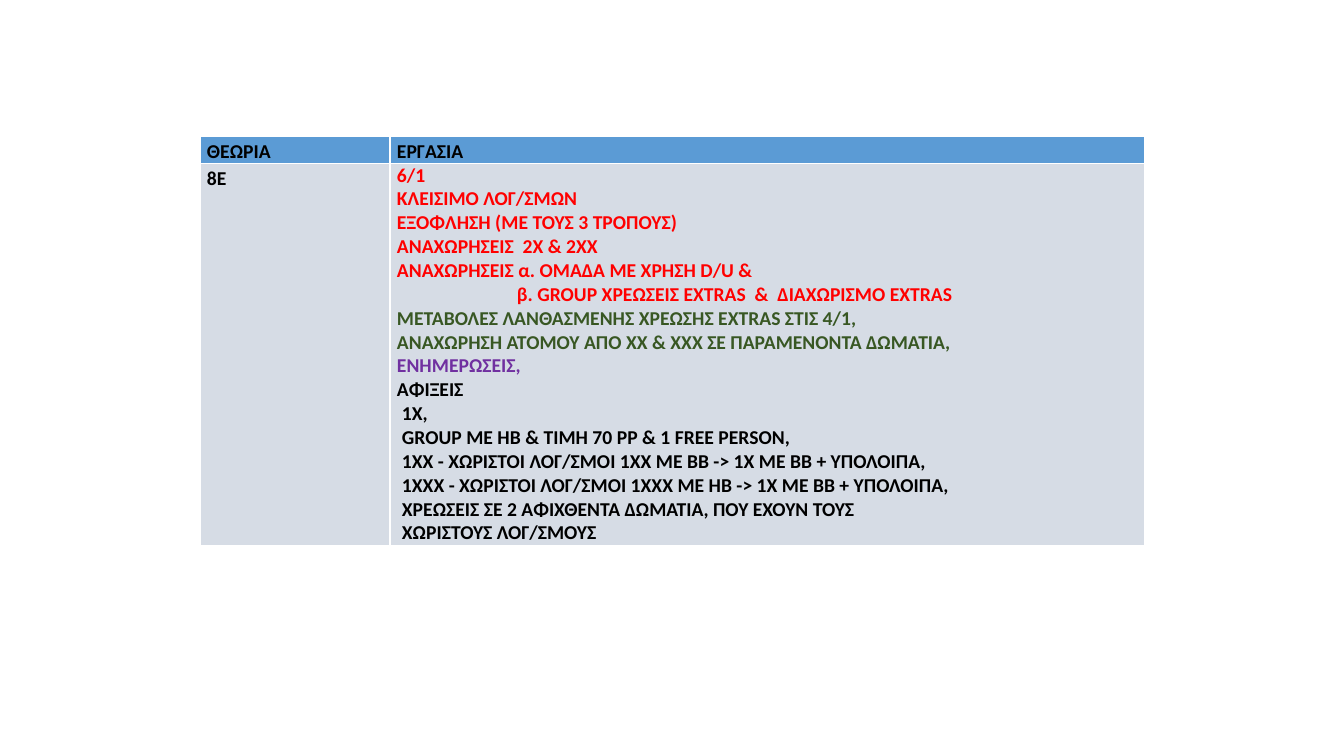
from lxml.etree import SubElement
from pptx import Presentation
from pptx.dml.color import RGBColor
from pptx.enum.text import PP_ALIGN as Align
from pptx.oxml.ns import qn
from pptx.util import Pt

PX = 914400 / 100.8
BLACK = RGBColor(0x00, 0x00, 0x00)
RED = RGBColor(0xFF, 0x00, 0x00)
GREEN = RGBColor(0x38, 0x57, 0x23)
PURPLE = RGBColor(0x70, 0x30, 0xA0)
WHITE = RGBColor(0xFF, 0xFF, 0xFF)
HEADER_FILL = RGBColor(0x5B, 0x9B, 0xD5)
BODY_FILL = RGBColor(0xD6, 0xDC, 0xE5)


def px(length):
    return round(length * PX)


def fill_cell(cell, fill, lines, alignment=None, spacing=None):
    """Format a cell and write its (text, colour, indent in px) lines."""
    cell.margin_left = cell.margin_right = px(7)
    cell.margin_top = cell.margin_bottom = 0
    properties = cell._tc.get_or_add_tcPr()
    for side in ("lnL", "lnR", "lnT", "lnB"):
        border = SubElement(properties, qn(f"a:{side}"), w=str(Pt(1)))
        SubElement(SubElement(border, qn("a:solidFill")), qn("a:srgbClr"), val=str(WHITE))
    cell.fill.solid()
    cell.fill.fore_color.rgb = fill
    for index, (text, color, indent) in enumerate(lines):
        frame = cell.text_frame
        paragraph = frame.add_paragraph() if index else frame.paragraphs[0]
        paragraph.alignment = alignment
        paragraph.line_spacing = spacing
        if indent:
            paragraph._p.get_or_add_pPr().set("marL", str(px(indent)))
        run = paragraph.add_run()
        run.text = text
        run.font.name = "Calibri"
        run.font.size = Pt(14)
        run.font.bold = True
        run.font.color.rgb = color


presentation = Presentation()
presentation.slide_width = px(1344)
presentation.slide_height = px(756)
slide = presentation.slides.add_slide(presentation.slide_layouts[6])

# Table grid
table = slide.shapes.add_table(2, 2, px(200), px(136), px(945), px(408)).table
table.horz_banding = False
for column, width in zip(table.columns, (190, 755)):
    column.width = px(width)
for row, height in zip(table.rows, (27, 381)):
    row.height = px(height)

# Header row and theory class
for row, column, text, fill in (
    (0, 0, "ΘΕΩΡΙΑ", HEADER_FILL),
    (0, 1, "ΕΡΓΑΣΙΑ", HEADER_FILL),
    (1, 0, "8E", BODY_FILL),
):
    fill_cell(table.cell(row, column), fill, [(text, BLACK, 0)], Align.JUSTIFY, 1.15)

# Tasks
tasks = [
    ("6/1", RED, 0),
    ("ΚΛΕΙΣΙΜΟ ΛΟΓ/ΣΜΩΝ", RED, 0),
    ("ΕΞΟΦΛΗΣΗ (ΜΕ ΤΟΥΣ 3 ΤΡΟΠΟΥΣ)", RED, 0),
    ("ΑΝΑΧΩΡΗΣΕΙΣ  2Χ & 2ΧΧ", RED, 0),
    ("ΑΝΑΧΩΡΗΣΕΙΣ α. ΟΜΑΔΑ ΜΕ ΧΡΗΣΗ D/U &", RED, 0),
    ("β. GROUP ΧΡΕΩΣΕΙΣ EXTRAS  &  ΔΙΑΧΩΡΙΣΜΟ EXTRAS", RED, 120),
    ("ΜΕΤΑΒΟΛΕΣ ΛΑΝΘΑΣΜΕΝΗΣ ΧΡΕΩΣΗΣ EXTRAS ΣΤΙΣ 4/1,", GREEN, 0),
    ("ΑΝΑΧΩΡΗΣΗ ΑΤΟΜΟΥ ΑΠΟ ΧΧ & ΧΧΧ ΣΕ ΠΑΡΑΜΕΝΟΝΤΑ ΔΩΜΑΤΙΑ,", GREEN, 0),
    ("ΕΝΗΜΕΡΩΣΕΙΣ,", PURPLE, 0),
    ("ΑΦΙΞΕΙΣ", BLACK, 0),
    ("1Χ,", BLACK, 5),
    ("GROUP ME ΗB & ΤΙΜΗ 70 PP & 1 FREE PERSON,", BLACK, 5),
    ("1ΧΧ - ΧΩΡΙΣΤΟΙ ΛΟΓ/ΣΜΟΙ 1ΧΧ ΜΕ ΒΒ -> 1Χ ΜΕ ΒΒ + ΥΠΟΛΟΙΠΑ,", BLACK, 5),
    ("1ΧΧΧ - ΧΩΡΙΣΤΟΙ ΛΟΓ/ΣΜΟΙ 1ΧΧΧ ΜΕ ΗΒ -> 1Χ ΜΕ ΒΒ + ΥΠΟΛΟΙΠΑ,", BLACK, 5),
    ("ΧΡΕΩΣΕΙΣ ΣΕ 2 ΑΦΙΧΘΕΝΤΑ ΔΩΜΑΤΙΑ, ΠΟΥ ΕΧΟΥΝ ΤΟΥΣ", BLACK, 5),
    ("ΧΩΡΙΣΤΟΥΣ ΛΟΓ/ΣΜΟΥΣ", BLACK, 5),
]
fill_cell(table.cell(1, 1), BODY_FILL, tasks)

presentation.save("out.pptx")
